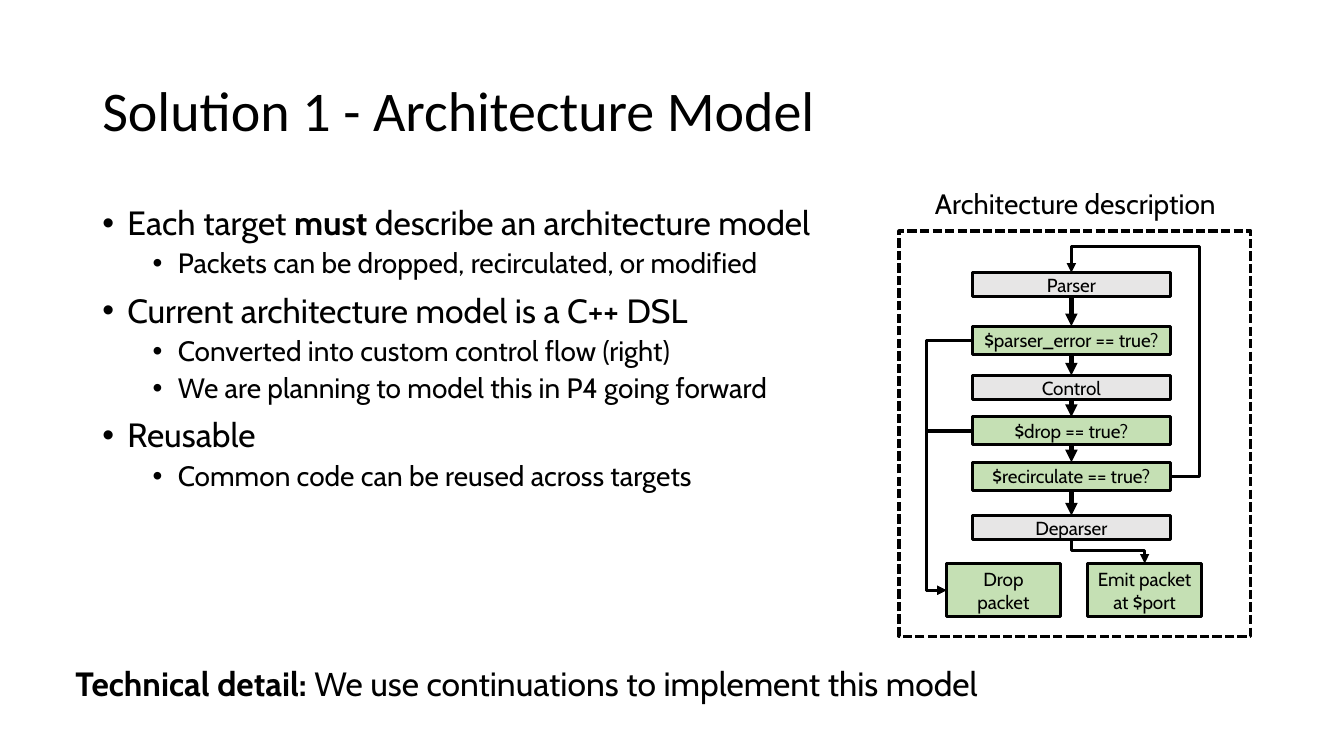
from dataclasses import dataclass
from typing import Any

from lxml import etree
from pptx import Presentation
from pptx import util as u
from pptx.dml.color import RGBColor
from pptx.enum import dml, shapes, text
from pptx.oxml import ns

Pt = u.Pt
TOP, LEFT, BASE, RIGHT = range(4)


@dataclass(frozen=True)
class Theme:
    ink: str = "000000"
    gray: str = "E7E6E6"
    green: str = "C5E0B4"
    head: str = "Calibri"
    body: str = "Cabin"
    title: float = 40
    large: float = 24
    small: float = 20
    label: float = 13.5
    edge: float = 2.25
    arrow: float = 3


T = Theme()


@dataclass(frozen=True)
class Run:
    words: str
    bold: bool = False


@dataclass(frozen=True)
class Para:
    runs: tuple[Run, ...]
    size: float
    font: str = T.body
    level: int | None = None
    center: bool = False
    tight: bool = False


@dataclass(frozen=True)
class Box:
    key: str
    lines: tuple[str, ...]
    fill: str
    mid_x: float
    mid_y: float
    width: float
    height: float


@dataclass(frozen=True)
class Link:
    start: str
    out: int
    end: str
    into: int
    bend: str = ""
    bias: tuple[float, ...] = ()


def apply(item: Any, values: dict[str, Any]) -> None:
    for name, value in values.items():
        setattr(item, name, value)


def add_node(parent: Any, tag: str, **attrs: str) -> Any:
    return etree.SubElement(parent, ns.qn(tag), attrs)


def write(frame: Any, paras: list[Para], inset: bool = True, middle: bool = False) -> None:
    side, cap = (Pt(7.2), Pt(3.6)) if inset else (0, 0)
    apply(frame, {
        "word_wrap": True,
        "auto_size": text.MSO_AUTO_SIZE.NONE,
        "vertical_anchor": text.MSO_ANCHOR.MIDDLE if middle else text.MSO_ANCHOR.TOP,
        "margin_left": side, "margin_right": side,
        "margin_top": cap, "margin_bottom": cap,
    })
    for i, para in enumerate(paras):
        row = frame.add_paragraph() if i else frame.paragraphs[0]
        row.alignment = text.PP_ALIGN.CENTER if para.center else text.PP_ALIGN.LEFT
        if para.tight:
            row.line_spacing = 0.9
        if para.level is not None:
            apply(row, {"level": para.level, "space_before": Pt(5 if para.level else 10)})
            props = row._p.get_or_add_pPr()
            props.set("marL", str(Pt(18 + 36 * para.level)))
            props.set("indent", str(Pt(-18)))
            add_node(props, "a:buFont", typeface="Arial")
            add_node(props, "a:buChar", char="•")
        for part in para.runs:
            run = row.add_run()
            run.text = part.words
            apply(run.font, {"name": para.font, "size": Pt(para.size), "bold": part.bold})
            run.font.color.rgb = RGBColor.from_string(T.ink)


def add_text(slide: Any, x: float, y: float, w: float, h: float,
             paras: list[Para], middle: bool = False) -> None:
    box = slide.shapes.add_textbox(Pt(x), Pt(y), Pt(w), Pt(h))
    write(box.text_frame, paras, middle=middle)


def add_rect(slide: Any, x: float, y: float, w: float, h: float) -> Any:
    rect = slide.shapes.add_shape(shapes.MSO_SHAPE.RECTANGLE, Pt(x), Pt(y), Pt(w), Pt(h))
    rect.shadow.inherit = False
    rect.line.width = Pt(T.edge)
    rect.line.color.rgb = RGBColor.from_string(T.ink)
    return rect


def add_box(slide: Any, box: Box) -> Any:
    rect = add_rect(slide, box.mid_x - box.width / 2, box.mid_y - box.height / 2,
                    box.width, box.height)
    rect.fill.solid()
    rect.fill.fore_color.rgb = RGBColor.from_string(box.fill)
    paras = [Para((Run(line),), T.label, center=True) for line in box.lines]
    write(rect.text_frame, paras, inset=False, middle=True)
    return rect


def turn(line: Any) -> None:
    wide = line.end_x - line.begin_x
    tall = line.end_y - line.begin_y
    left = line.begin_x + (wide - tall) // 2
    top = line.begin_y + (tall - wide) // 2
    apply(line, {"left": left, "top": top, "width": tall, "height": wide})
    form = line._element.spPr.find(ns.qn("a:xfrm"))
    form.attrib.pop("flipV", None)
    form.set("flipH", "1")
    form.set("rot", "16200000")


def add_link(slide: Any, link: Link, rects: dict[str, Any]) -> None:
    kind = shapes.MSO_CONNECTOR.ELBOW if link.bend else shapes.MSO_CONNECTOR.STRAIGHT
    line = slide.shapes.add_connector(kind, 0, 0, 0, 0)
    line.begin_connect(rects[link.start], link.out)
    line.end_connect(rects[link.end], link.into)
    line.line.width = Pt(T.edge if link.bend else T.arrow)
    line.line.color.rgb = RGBColor.from_string(T.ink)
    props = line._element.spPr
    if link.bend:
        shape = props.find(ns.qn("a:prstGeom"))
        shape.set("prst", link.bend)
        guides = shape.find(ns.qn("a:avLst"))
        for i, bias in enumerate(link.bias, 1):
            add_node(guides, "a:gd", name=f"adj{i}", fmla=f"val {round(bias * 100000)}")
        if link.out == BASE:
            turn(line)
    add_node(line.line._get_or_add_ln(), "a:tailEnd", type="triangle")
    add_node(props, "a:effectLst")


def point(level: int, *runs: Run) -> Para:
    return Para(runs, T.small if level else T.large, level=level, tight=True)


POINTS = [
    point(0, Run("Each target "), Run("must", True), Run(" describe an architecture model")),
    point(1, Run("Packets can be dropped, recirculated, or modified")),
    point(0, Run("Current architecture model is a C++ DSL")),
    point(1, Run("Converted into custom control flow (right)")),
    point(1, Run("We are planning to model this in P4 going forward")),
    point(0, Run("Reusable")),
    point(1, Run("Common code can be reused across targets")),
]

STEPS = [
    ("Parser", T.gray, 203.4),
    ("$parser_error == true?", T.green, 243),
    ("Control", T.gray, 276.8),
    ("$drop == true?", T.green, 307.8),
    ("$recirculate == true?", T.green, 340.2),
    ("Deparser", T.gray, 376.9),
]
PARSE, ERROR, CHECK, DROP, AGAIN, LAST = [step[0] for step in STEPS]

BOXES = [Box(name, (name,), fill, 765.3, y, 141.8, 17.3 if fill == T.gray else 20)
         for name, fill, y in STEPS] + [
    Box("trash", ("Drop", "packet"), T.green, 716.8, 421.6, 81.4, 38.2),
    Box("emit", ("Emit packet", "at $port"), T.green, 817.6, 421.6, 81.4, 38.2),
]

LINKS = [Link(a[0], BASE, b[0], TOP) for a, b in zip(STEPS, STEPS[1:])] + [
    Link(AGAIN, RIGHT, PARSE, TOP, "bentConnector4", (-0.295, 1.128)),
    Link(DROP, LEFT, "trash", LEFT, "bentConnector3", (1.79,)),
    Link(ERROR, LEFT, "trash", LEFT, "bentConnector3", (1.79,)),
    Link(LAST, BASE, "emit", TOP, "bentConnector3", (0.44,)),
]


def main() -> None:
    deck = Presentation()
    apply(deck, {"slide_width": Pt(960), "slide_height": Pt(540)})
    slide = deck.slides.add_slide(deck.slide_layouts[6])
    title = Para((Run("Solution 1 - Architecture Model"),), T.title, T.head, tight=True)
    add_text(slide, 66, 28.8, 828, 104.4, [title], middle=True)
    add_text(slide, 66, 144, 828, 342.7, POINTS)
    frame = add_rect(slide, 642.2, 165, 251.3, 289.4)
    frame.fill.background()
    frame.line.dash_style = dml.MSO_LINE.SQUARE_DOT
    rects = {box.key: add_box(slide, box) for box in BOXES}
    for link in LINKS:
        add_link(slide, link, rects)
    add_text(slide, 653, 129.6, 230.4, 31.5,
             [Para((Run("Architecture description"),), T.small, center=True)])
    add_text(slide, 46.8, 470.2, 670.3, 36,
             [Para((Run("Technical detail: ", True),
                    Run("We use continuations to implement this model")), T.large)])
    deck.save("out.pptx")


if __name__ == "__main__":
    main()
